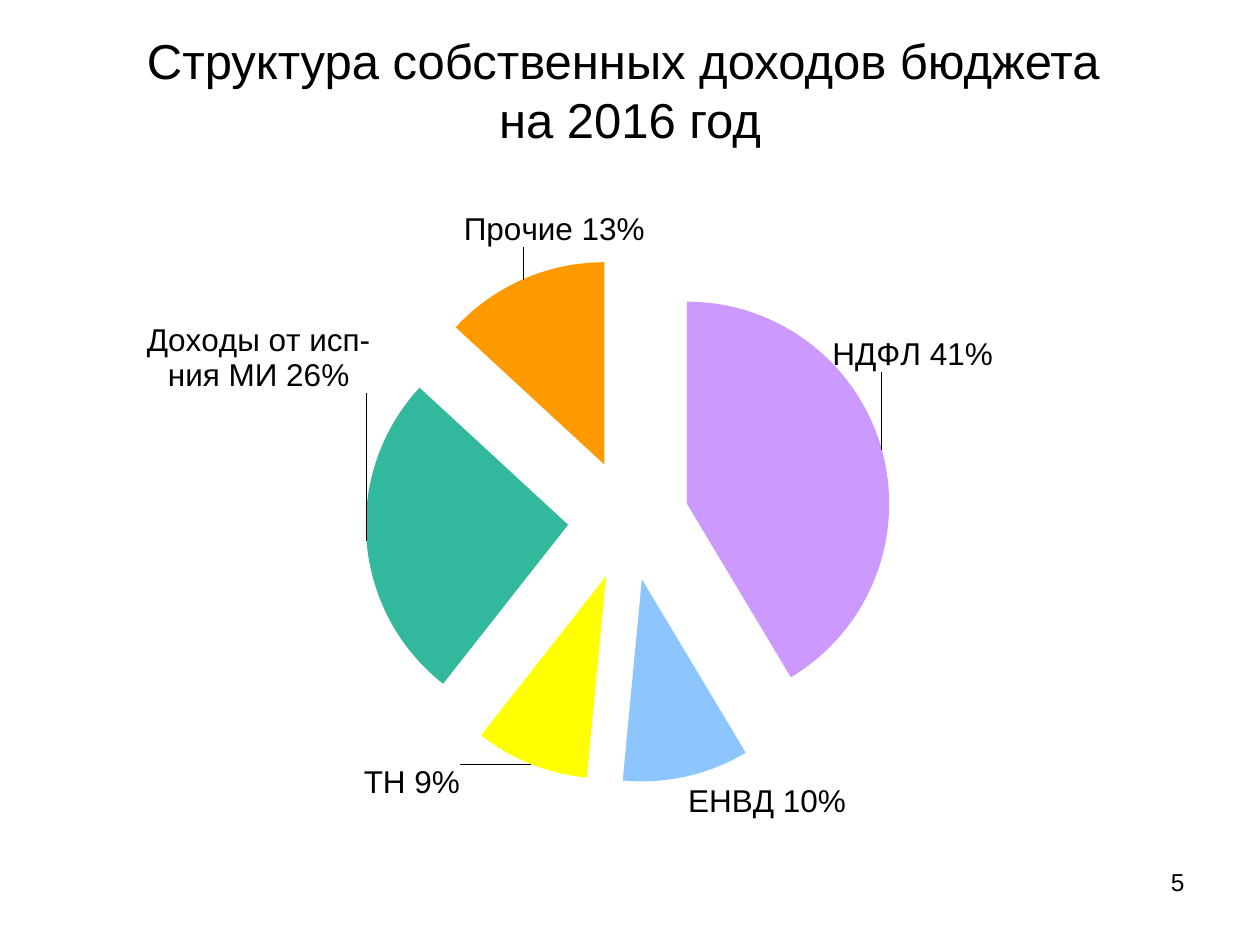
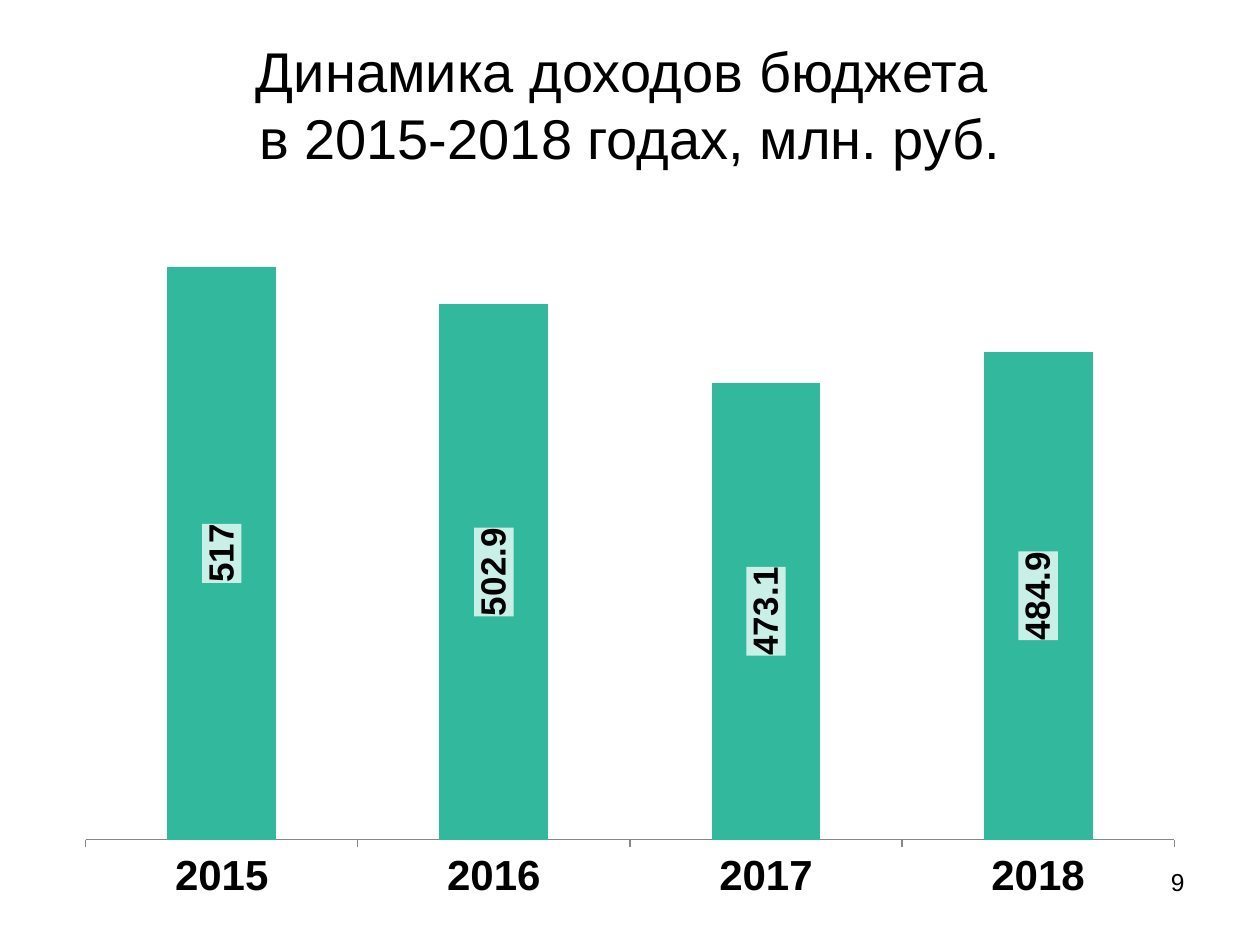
from lxml.etree import SubElement
from pptx import Presentation
from pptx.chart.data import CategoryChartData
from pptx.dml.color import RGBColor
from pptx.enum.chart import XL_CHART_TYPE as ChartType, XL_LABEL_POSITION as LabelPosition
from pptx.enum.chart import XL_TICK_MARK as TickMark
from pptx.enum.text import MSO_ANCHOR as Anchor, MSO_AUTO_SIZE as AutoSize, PP_ALIGN as Align
from pptx.oxml import parse_xml
from pptx.oxml.ns import nsdecls, qn
from pptx.util import Pt

FONT = "Arial"
BLACK = RGBColor(0x00, 0x00, 0x00)
TEAL = RGBColor(0x32, 0xB8, 0x9C)
LILAC = RGBColor(0xCC, 0x99, 0xFF)
SKY = RGBColor(0x8D, 0xC6, 0xFF)
YELLOW = RGBColor(0xFF, 0xFF, 0x00)
ORANGE = RGBColor(0xFF, 0x99, 0x00)
AXIS_GREY = RGBColor(0x87, 0x87, 0x87)
LABEL_MINT = RGBColor(0xC9, 0xF0, 0xE7)

# Places are left, top, width, height in points.
PAGE_NUMBER_PLACE = (516, 492, 168, 37)

REVENUE_SHARES = {
    "title": "Структура собственных доходов бюджета \vна 2016 год",
    "title_place": (36, 24, 648, 54),
    "title_size": 28,
    "page_number": "5",
    "chart_place": (32, 118, 648, 362),
    "plot_share": (0.27, 0.08, 0.47, 0.83),
    "explosion": 30,
    # category, percent, colour, label shift as a share of the chart
    "slices": [
        ("НДФЛ", 41, LILAC, (-0.05, -0.12)),
        ("ЕНВД", 10, SKY, (0, 0)),
        ("ТН", 9, YELLOW, (-0.06, -0.01)),
        ("Доходы от исп-ния МИ", 26, TEAL, (0.01, -0.29)),
        ("Прочие", 13, ORANGE, (0.11, -0.04)),
    ],
}

REVENUE_BY_YEAR = {
    "title": "Динамика доходов бюджета \vв 2015-2018 годах, млн. руб.",
    "title_place": (36, 22, 648, 74),
    "title_size": 32,
    "page_number": "9",
    "chart_place": (36, 102, 648, 420),
    "plot_share": (0.02, 0.02, 0.96, 0.88),
    "value_range": (300, 545),
    "years": [("2015", 517), ("2016", 502.9), ("2017", 473.1), ("2018", 484.9)],
}


def format_font(font, size, **extra):
    for name, value in {"name": FONT, "size": Pt(size), **extra}.items():
        setattr(font, name, value)
    font.color.rgb = BLACK


def write_text(box, text, size, align, anchor):
    frame = box.text_frame
    for name, value in {"word_wrap": True, "auto_size": AutoSize.NONE,
                        "vertical_anchor": anchor}.items():
        setattr(frame, name, value)
    frame.text = text
    para = frame.paragraphs[0]
    para.alignment = align
    for span in para.runs:
        format_font(span.font, size)


def add_page(deck, content):
    page = deck.slides.add_slide(deck.slide_layouts[5])
    title = page.shapes.title
    for side, value in zip(("left", "top", "width", "height"), content["title_place"]):
        setattr(title, side, Pt(value))
    write_text(title, content["title"], content["title_size"], Align.CENTER, Anchor.MIDDLE)
    number = page.shapes.add_textbox(*map(Pt, PAGE_NUMBER_PLACE))
    write_text(number, content["page_number"], 14, Align.RIGHT, Anchor.TOP)
    return page


def layout_xml(**parts):
    """Return a manual chart layout with its parts in the order given."""
    children = "".join(f'<c:{tag} val="{value}"/>' for tag, value in parts.items())
    return f'<c:layout {nsdecls("c")}><c:manualLayout>{children}</c:manualLayout></c:layout>'


def add_chart(page, content, kind, rows):
    data = CategoryChartData()
    data.categories = [row[0] for row in rows]
    data.add_series("Series 1", [row[1] for row in rows])
    chart = page.shapes.add_chart(kind, *map(Pt, content["chart_place"]), data).chart
    chart.has_title = chart.has_legend = False
    format_font(chart.font, 18)

    plot_area = chart.element.find(".//" + qn("c:plotArea"))
    for old_layout in plot_area.findall(qn("c:layout")):
        plot_area.remove(old_layout)
    x, y, w, h = content["plot_share"]
    plot_area.insert(0, parse_xml(layout_xml(
        layoutTarget="inner", xMode="edge", yMode="edge", x=x, y=y, w=w, h=h)))
    return chart


def slice_label(index, shift):
    shift_x, shift_y = shift
    layout = layout_xml(x=shift_x, y=shift_y) if any(shift) else ""
    return parse_xml(
        f'<c:dLbl {nsdecls("c")}><c:idx val="{index}"/>{layout}<c:dLblPos val="outEnd"/>'
        '<c:showLegendKey val="0"/><c:showVal val="0"/><c:showCatName val="1"/>'
        '<c:showSerName val="0"/><c:showPercent val="1"/><c:showBubbleSize val="0"/>'
        '<c:separator> </c:separator></c:dLbl>')


def build_shares_page(deck, content):
    slices = content["slices"]
    chart = add_chart(add_page(deck, content), content, ChartType.PIE, slices)
    series = chart.plots[0].series[0]
    explosion = SubElement(series._element, qn("c:explosion"), val=str(content["explosion"]))
    series._element.find(qn("c:tx")).addnext(explosion)

    labels = series.data_labels
    for name, value in {"show_value": False, "show_category_name": True,
                        "show_percentage": True,
                        "position": LabelPosition.OUTSIDE_END}.items():
        setattr(labels, name, value)
    format_font(labels.font, 18)
    for index, (_, _, colour, shift) in enumerate(slices):
        fill = series.points[index].format.fill
        fill.solid()
        fill.fore_color.rgb = colour
        labels._element.insert(index, slice_label(index, shift))


def build_years_page(deck, content):
    chart = add_chart(add_page(deck, content), content,
                      ChartType.COLUMN_STACKED, content["years"])
    plot = chart.plots[0]
    for name, value in {"gap_width": 150, "overlap": 100,
                        "vary_by_categories": False}.items():
        setattr(plot, name, value)

    years, amounts = chart.category_axis, chart.value_axis
    years.major_tick_mark = TickMark.OUTSIDE
    years.format.line.color.rgb = AXIS_GREY
    format_font(years.tick_labels.font, 24, bold=True)
    amounts.minimum_scale, amounts.maximum_scale = content["value_range"]
    amounts.has_major_gridlines = amounts.visible = False

    series = plot.series[0]
    series.format.fill.solid()
    series.format.fill.fore_color.rgb = TEAL
    labels = series.data_labels
    labels.show_value = True
    labels.position = LabelPosition.CENTER
    format_font(labels.font, 20, bold=True)
    text_format = labels._element.find(qn("c:txPr"))
    for name, value in {"rot": "-5400000", "vert": "horz"}.items():
        text_format.find(qn("a:bodyPr")).set(name, value)
    text_format.addprevious(parse_xml(
        f'<c:spPr {nsdecls("c", "a")}><a:solidFill><a:srgbClr val="{LABEL_MINT}"/>'
        '</a:solidFill></c:spPr>'))


def main():
    deck = Presentation()
    deck.slide_width, deck.slide_height = Pt(720), Pt(540)
    build_shares_page(deck, REVENUE_SHARES)
    build_years_page(deck, REVENUE_BY_YEAR)
    deck.save("out.pptx")


if __name__ == "__main__":
    main()
